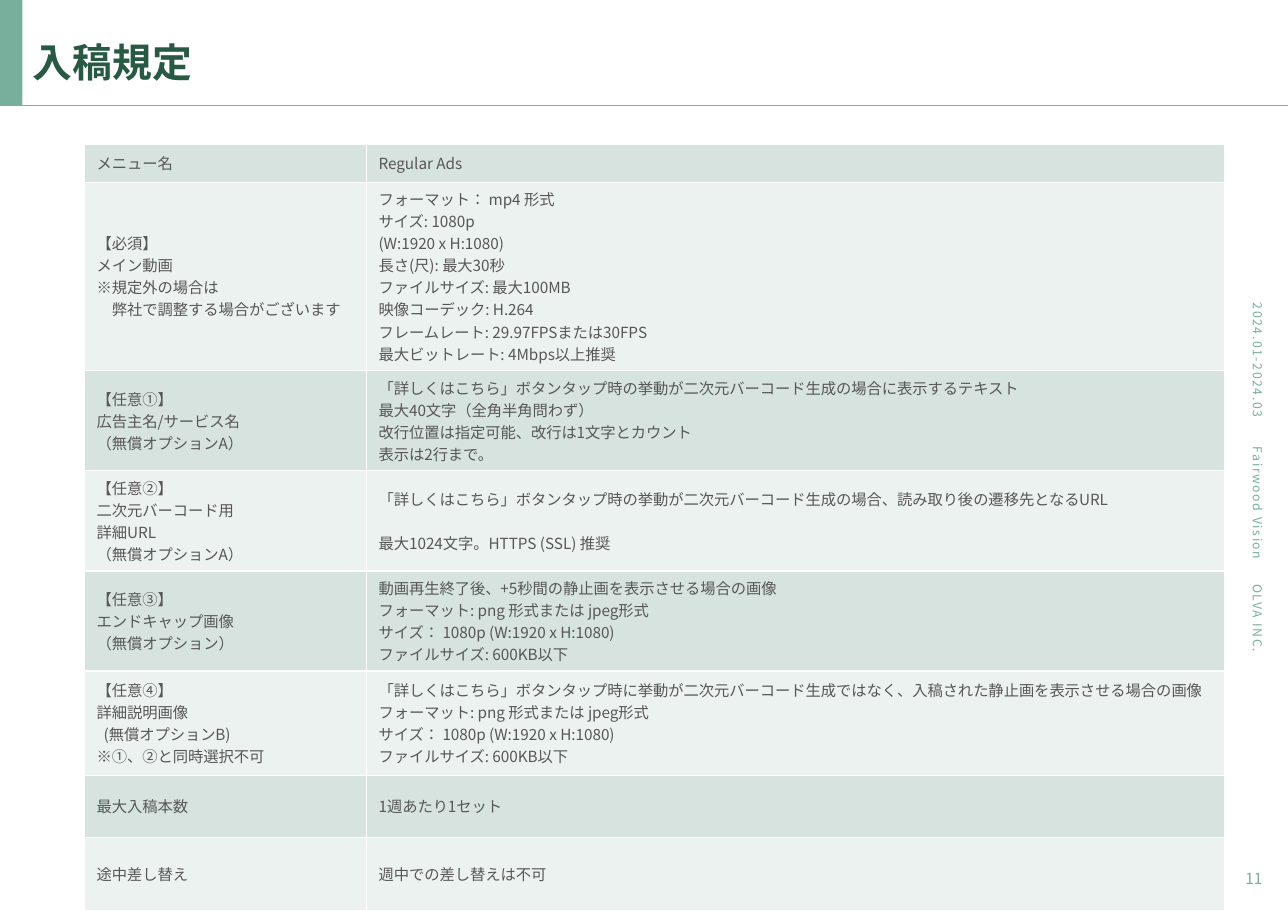
from lxml.etree import SubElement
from pptx import Presentation
from pptx.dml.color import RGBColor
from pptx.enum.lang import MSO_LANGUAGE_ID as Language
from pptx.enum.shapes import MSO_CONNECTOR as Connector, MSO_SHAPE as Shape
from pptx.enum.text import MSO_ANCHOR as Anchor, PP_ALIGN as Align
from pptx.oxml.ns import qn
from pptx.util import Cm, Pt

FONT = "Noto Sans CJK JP"
GREEN, DARK_GREEN, GREY, WHITE = "77AF9C", "285943", "575756", "FFFFFF"
BANDS = ["D6E3DE", "ECF2EF"]


def rgb(value):
    return RGBColor.from_string(value)


def write(frame, lines, size, color, bold=False, align=Align.LEFT, spacing=None):
    """Fill a text frame with one styled paragraph per line."""
    text_format = {"name": FONT, "size": Pt(size), "bold": bold,
                   "language_id": Language.JAPANESE}
    frame.word_wrap = True
    frame.text = "\n".join(lines)
    for para in frame.paragraphs:
        para.alignment = align
        for span in para.runs:
            span.font.color.rgb = rgb(color)
            for name, value in text_format.items():
                setattr(span.font, name, value)
            props = span._r.get_or_add_rPr()
            SubElement(props, qn("a:ea"), typeface=FONT)
            if spacing:
                props.set("spc", str(spacing))


deck = Presentation()
deck.slide_width, deck.slide_height = Cm(29.7), Cm(21)
page = deck.slides.add_slide(deck.slide_layouts[5])
shapes = page.shapes

# Header
title = shapes.title
for name, value in {"left": 0.5, "top": 0.6, "width": 29.16, "height": 1.8}.items():
    setattr(title, name, Cm(value))
write(title.text_frame, ["入稿規定"], 26, DARK_GREEN, bold=True)
title.text_frame.vertical_anchor = Anchor.MIDDLE
title.text_frame.paragraphs[0].line_spacing = 0.9

rule = shapes.add_connector(Connector.STRAIGHT, 0, Cm(2.42), Cm(29.7), Cm(2.42))
rule.line.color.rgb = rgb(GREEN)
rule.line.width = Pt(0.5)
SubElement(rule._element.spPr, qn("a:effectLst"))

accent = shapes.add_shape(Shape.RECTANGLE, 0, 0, Cm(0.52), Cm(2.42))
accent.shadow.inherit = False
accent.fill.solid()
accent.fill.fore_color.rgb = rgb(GREEN)
accent.line.fill.background()

# Side labels and page number
side_labels = [("2024.01-2024.03", 8), ("Fairwood Vision", 11.3), ("OLVA INC.", 13.95)]
for label, top in side_labels:
    box = shapes.add_textbox(Cm(27.18), Cm(top), Cm(3.63), Cm(0.6))
    box.rotation = 90
    write(box.text_frame, [label], 8, GREEN, align=Align.CENTER, spacing=100)

number = shapes.add_textbox(Cm(22.68), Cm(19.91), Cm(6.68), Cm(1.1))
write(number.text_frame, ["11"], 10, GREEN, align=Align.RIGHT)

# Submission rules: row height, item, requirements
image_format = [
    "フォーマット: png 形式または jpeg形式",
    "サイズ： 1080p (W:1920 x H:1080)",
    "ファイルサイズ: 600KB以下",
]
rows = [
    (0.87, ["メニュー名"], ["Regular Ads"]),
    (4.34,
     ["【必須】", "メイン動画", "※規定外の場合は", "弊社で調整する場合がございます"],
     ["フォーマット： mp4 形式", "サイズ: 1080p", "(W:1920 x H:1080)",
      "長さ(尺): 最大30秒", "ファイルサイズ: 最大100MB", "映像コーデック: H.264",
      "フレームレート: 29.97FPSまたは30FPS", "最大ビットレート: 4Mbps以上推奨"]),
    (2.31,
     ["【任意①】", "広告主名/サービス名", "（無償オプションA）"],
     ["「詳しくはこちら」ボタンタップ時の挙動が二次元バーコード生成の場合に表示するテキスト",
      "最大40文字（全角半角問わず）",
      "改行位置は指定可能、改行は1文字とカウント", "表示は2行まで。"]),
    (2.31,
     ["【任意②】", "二次元バーコード用", "詳細URL", "（無償オプションA）"],
     ["「詳しくはこちら」ボタンタップ時の挙動が二次元バーコード生成の場合、読み取り後の遷移先となるURL",
      "最大1024文字。HTTPS (SSL) 推奨"]),
    (2.31,
     ["【任意③】", "エンドキャップ画像", "（無償オプション）"],
     ["動画再生終了後、+5秒間の静止画を表示させる場合の画像", *image_format]),
    (2.4,
     ["【任意④】", "詳細説明画像", "(無償オプションB)", "※①、②と同時選択不可"],
     ["「詳しくはこちら」ボタンタップ時に挙動が二次元バーコード生成ではなく、入稿された静止画を表示させる場合の画像",
      *image_format]),
    (1.43, ["最大入稿本数"], ["1週あたり1セット"]),
    (1.7, ["途中差し替え"], ["週中での差し替えは不可"]),
]
indents = {"弊社で調整する場合がございます": 0.35, "(無償オプションB)": 0.16}
gaps_before = {"最大1024文字。HTTPS (SSL) 推奨": 14.5}
cell_format = {
    "margin_left": Cm(0.28), "margin_right": Cm(0.28),
    "margin_top": Cm(0.13), "margin_bottom": Cm(0.13),
    "vertical_anchor": Anchor.MIDDLE,
}

total_height = sum(height for height, *_ in rows)
table = shapes.add_table(len(rows), 2, Cm(1.95), Cm(3.33),
                         Cm(26.3), Cm(total_height)).table
table.first_row = table.horz_banding = False
for column, width in zip(table.columns, [6.5, 19.8]):
    column.width = Cm(width)

for index, (height, *contents) in enumerate(rows):
    table.rows[index].height = Cm(height)
    for cell, lines in zip(table.rows[index].cells, contents):
        write(cell.text_frame, lines, 10, GREY)
        for name, value in cell_format.items():
            setattr(cell, name, value)
        for para in cell.text_frame.paragraphs:
            if para.text in indents:
                para._p.get_or_add_pPr().set("marL", str(Cm(indents[para.text])))
            if para.text in gaps_before:
                para.space_before = Pt(gaps_before[para.text])
        props = cell._tc.get_or_add_tcPr()
        for side in ["a:lnL", "a:lnR", "a:lnT", "a:lnB"]:
            border = SubElement(props, qn(side), w=str(Pt(1)))
            SubElement(SubElement(border, qn("a:solidFill")), qn("a:srgbClr"), val=WHITE)
        cell.fill.solid()
        cell.fill.fore_color.rgb = rgb(BANDS[index % 2])

deck.save("out.pptx")
